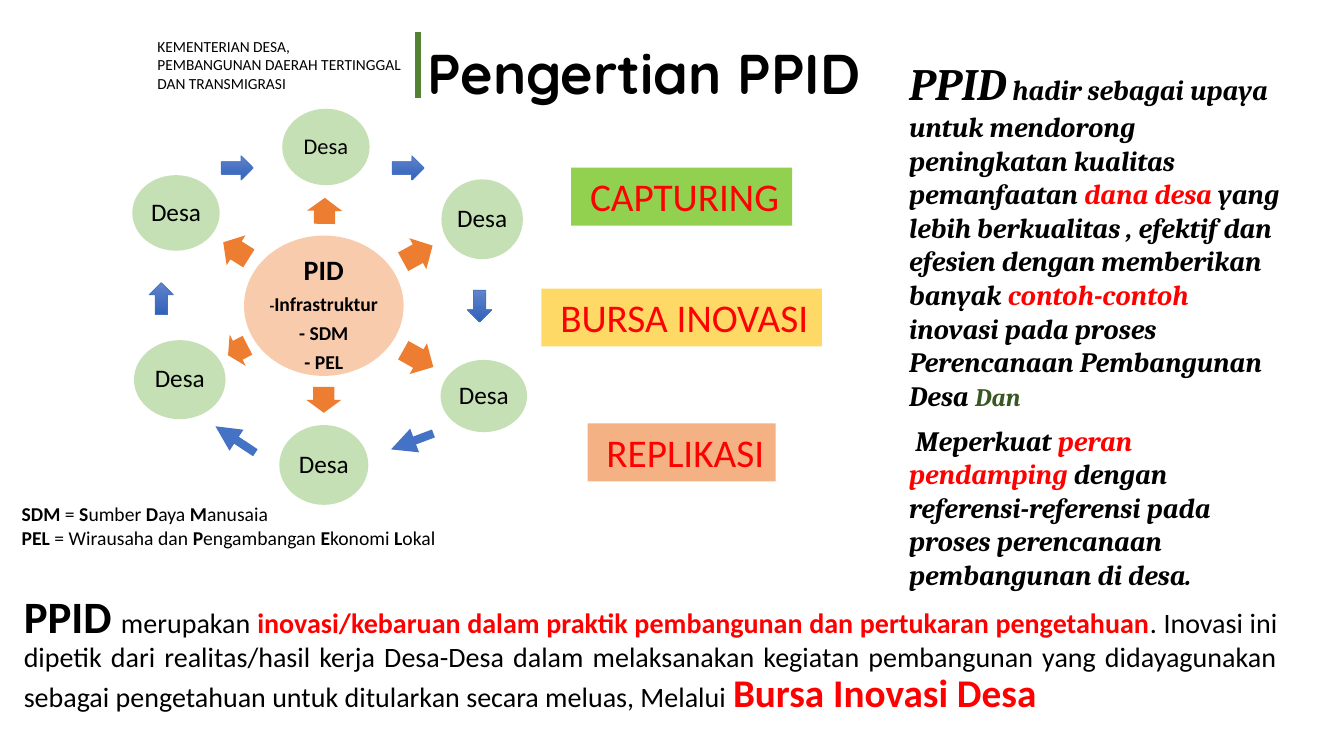
from dataclasses import dataclass

from lxml import etree
from pptx import Presentation, util as u
from pptx.dml.color import RGBColor
from pptx.enum import shapes, text
from pptx.oxml.ns import qn

COLUMNS, ROWS = 160, 90
WIDTH, HEIGHT = u.Inches(13.33), u.Inches(7.5)
SHAPE = shapes.MSO_SHAPE
ALIGN = text.PP_ALIGN
ANCHOR = text.MSO_ANCHOR


@dataclass(frozen=True)
class Theme:
    body: str = "Calibri"
    heading: str = "Quicksand"
    serif: str = "Cambria"
    black: str = "000000"
    red: str = "FF0000"
    dark_green: str = "385723"
    divider: str = "548235"
    village: str = "C5E0B4"
    hub: str = "F8CBAD"
    spoke: str = "ED7D31"
    cycle: str = "4472C4"
    cycle_stops: tuple = ("6183CB", "3062BB")
    capturing: str = "92D050"
    exchange: str = "FFD966"
    replication: str = "F4B183"
    display: int = 40
    lead: int = 32
    large: int = 28
    normal: int = 20
    label: int = 18
    small_label: int = 16
    note: int = 14
    caption: int = 11


THEME = Theme()


def column(count):
    return round(WIDTH * count / COLUMNS)


def row(count):
    return round(HEIGHT * count / ROWS)


def area(left, top, width, height):
    return column(left), row(top), column(width), row(height)


def centred(x, y, width, height):
    return area(x - width / 2, y - height / 2, width, height)


def set_attributes(target, values):
    for name, value in values.items():
        setattr(target, name, value)


def style(size, color=THEME.black, name=THEME.body, **flags):
    return {"size": u.Pt(size), "name": name, "color": color, **flags}


def add_run(paragraph, wording, look):
    run = paragraph.add_run()
    run.text = wording
    run.font.color.rgb = RGBColor.from_string(look["color"])
    set_attributes(run.font, {k: v for k, v in look.items() if k != "color"})


def write(shape, paragraphs, frame=None, layout=None):
    """Fill a shape with paragraphs, each a list of (wording, style) runs."""
    text_frame = shape.text_frame
    set_attributes(text_frame, {"word_wrap": True, **(frame or {})})
    for index, runs in enumerate(paragraphs):
        paragraph = text_frame.add_paragraph() if index else text_frame.paragraphs[0]
        set_attributes(paragraph, {"alignment": ALIGN.LEFT, **(layout or {})})
        for wording, look in runs:
            add_run(paragraph, wording, look)


def add_text(slide, place, paragraphs, frame=None, layout=None):
    shape = slide.shapes.add_textbox(*place)
    write(shape, paragraphs, frame, layout)
    return shape


def add_filled(slide, kind, place, color):
    shape = slide.shapes.add_shape(kind, *place)
    shape.shadow.inherit = False
    shape.fill.solid()
    shape.fill.fore_color.rgb = RGBColor.from_string(color)
    shape.line.fill.background()
    return shape


def add_circle(slide, place, color, paragraphs, anchor, **layout):
    circle = add_filled(slide, SHAPE.OVAL, place, color)
    sides = ("left", "top", "right", "bottom")
    frame = {f"margin_{side}": 0 for side in sides}
    write(circle, paragraphs, {**frame, "vertical_anchor": anchor},
          {"alignment": ALIGN.CENTER, "line_spacing": 0.9, **layout})


def add_spoke(slide, x, y, length, rotation):
    arrow = add_filled(slide, SHAPE.RIGHT_ARROW, centred(x, y, length, 4.2), THEME.spoke)
    arrow.rotation = rotation
    arrow.adjustments[0] = 0.6
    arrow.adjustments[1] = 0.5


def add_cycle_arrow(slide, kind, x, y, width, height):
    arrow = add_filled(slide, kind, centred(x, y, width, height), THEME.cycle)
    arrow.fill.gradient()
    arrow.fill.gradient_angle = 270
    for stop, color in zip(arrow.fill.gradient_stops, THEME.cycle_stops):
        stop.color.rgb = RGBColor.from_string(color)
    arrow.line.color.rgb = RGBColor.from_string(THEME.cycle)
    arrow.line.width = u.Pt(0.5)


def add_line(slide, start, end, color, points, arrowhead=False):
    line = slide.shapes.add_connector(
        shapes.MSO_CONNECTOR.STRAIGHT,
        column(start[0]), row(start[1]), column(end[0]), row(end[1]))
    line.line.color.rgb = RGBColor.from_string(color)
    line.line.width = u.Pt(points)
    if arrowhead:
        etree.SubElement(line.line._get_or_add_ln(), qn("a:tailEnd"), type="triangle")
    etree.SubElement(line._element.spPr, qn("a:effectLst"))


def add_header(slide):
    caption = style(THEME.caption)
    add_text(slide, area(17.55, 3.8, 32.2, 7.9), [
        [("KEMENTERIAN DESA,", caption)],
        [("PEMBANGUNAN DAERAH TERTINGGAL DAN TRANSMIGRASI", caption)]])
    add_line(slide, (49.8, 3.8), (49.8, 11.7), THEME.divider, 4.5)
    title = slide.shapes.title
    set_attributes(title, dict(zip(("left", "top", "width", "height"),
                                   area(47.9, 1.5, 108.7, 15.1))))
    write(title, [[("Pengertian PPID", style(THEME.display, name=THEME.heading, bold=True))]],
          {"margin_left": column(3), "vertical_anchor": ANCHOR.MIDDLE,
           "auto_size": text.MSO_AUTO_SIZE.NONE}, {"line_spacing": 0.9})


def add_wheel(slide):
    note = style(THEME.note, bold=True)
    add_circle(slide, centred(38.55, 36.4, 19, 16.7), THEME.hub, [
        [("PID", style(THEME.normal, bold=True))],
        [("-", style(THEME.caption, bold=True)), ("Infrastruktur", note)],
        [("- SDM", note)],
        [("- PEL", note)]], ANCHOR.TOP, space_after=u.Pt(5.6))

    for spoke in ((38.65, 25.1, 3.1, 270.8), (49.75, 30.2, 4, 331.3),
                  (49.8, 42.7, 4.1, 29.3), (38.55, 47.6, 3.1, 90),
                  (28.3, 41.7, 2.6, 152.7), (28.1, 29.8, 3.6, 212.2)):
        add_spoke(slide, *spoke)

    for *place, size in ((38.8, 17.5, 10.4, 9.1, THEME.small_label),
                         (57.4, 26.1, 9.7, 9.5, THEME.label),
                         (57.6, 47.15, 10.3, 8.6, THEME.label),
                         (38.55, 55.35, 10.6, 9.5, THEME.label),
                         (21.4, 45.2, 10.9, 9.4, THEME.label),
                         (20.95, 25.35, 10.4, 9, THEME.label)):
        add_circle(slide, centred(*place), THEME.village,
                   [[("Desa", style(size))]], ANCHOR.MIDDLE)

    for arrow in ((SHAPE.RIGHT_ARROW, 28.25, 20, 3.8, 2.9),
                  (SHAPE.RIGHT_ARROW, 48.6, 20, 3.8, 2.9),
                  (SHAPE.DOWN_ARROW, 57.1, 36.45, 2.9, 3.8),
                  (SHAPE.UP_ARROW, 19.2, 35.55, 2.9, 3.8)):
        add_cycle_arrow(slide, *arrow)
    for start, end in (((51.6, 51.6), (46.55, 53.5)), ((30.4, 53.9), (25.65, 50.75))):
        add_line(slide, start, end, THEME.cycle, 6, arrowhead=True)


def add_legend(slide):
    """Asterisks switch bold on and off."""
    lines = ("*SDM* = *S*umber *D*aya *M*anusaia",
             "*PEL* = Wirausaha dan *P*engambangan *E*konomi *L*okal")
    add_text(slide, area(1.4, 59.2, 54, 6.8), [
        [(part, style(THEME.note, bold=index % 2 == 1))
         for index, part in enumerate(line.split("*")) if part] for line in lines])


def add_steps(slide):
    for wording, y, width, color in (("CAPTURING", 23.4, 26.3, THEME.capturing),
                                     ("BURSA INOVASI", 37.8, 33.4, THEME.exchange),
                                     ("REPLIKASI", 53.85, 22.4, THEME.replication)):
        step = add_filled(slide, SHAPE.RECTANGLE, centred(81.15, y, width, 6.9), color)
        write(step, [[(wording, style(THEME.large, THEME.red))]],
              {"margin_left": column(2.25), "word_wrap": False,
               "vertical_anchor": ANCHOR.TOP})


def add_purpose(slide):
    def serif(size=THEME.normal, color=THEME.black):
        return style(size, color, THEME.serif, bold=True, italic=True)

    plain, accent = serif(), serif(color=THEME.red)
    purpose = add_text(slide, area(107.05, 9.35, 46.8, 58.3), [
        [("PPID", serif(THEME.lead)), (" ", serif(THEME.label)),
         ("hadir sebagai upaya untuk mendorong peningkatan kualitas pemanfaatan ", plain),
         ("dana desa ", accent),
         ("yang lebih berkualitas , efektif dan efesien dengan memberikan banyak ", plain),
         ("contoh-contoh", accent),
         (" inovasi pada proses Perencanaan Pembangunan Desa ", plain),
         ("Dan", serif(THEME.label, THEME.dark_green))],
        [("Meperkuat ", plain), ("peran pendamping ", accent),
         ("dengan referensi-referensi pada proses perencanaan pembangunan di desa.", plain)]],
        {"vertical_anchor": ANCHOR.MIDDLE}, {"space_after": u.Pt(8)})
    purpose.text_frame.paragraphs[1]._p.get_or_add_pPr().set("indent", str(column(0.75)))


def add_definition(slide):
    plain = style(THEME.normal)
    add_text(slide, area(1.65, 70.2, 151.6, 16.1), [[
        ("PPID", style(THEME.lead, bold=True)), (" ", style(THEME.large, bold=True)),
        ("merupakan ", plain),
        ("inovasi/kebaruan dalam praktik pembangunan dan pertukaran pengetahuan",
         style(THEME.normal, THEME.red, bold=True)),
        (". Inovasi ini dipetik dari realitas/hasil kerja Desa-Desa dalam melaksanakan "
         "kegiatan pembangunan yang didayagunakan sebagai pengetahuan untuk ditularkan "
         "secara meluas, Melalui ", plain),
        ("Bursa Inovasi Desa", style(THEME.large, THEME.red, bold=True))]],
        layout={"alignment": ALIGN.JUSTIFY, "line_spacing": 0.9})


def main():
    presentation = Presentation()
    set_attributes(presentation, {"slide_width": WIDTH, "slide_height": HEIGHT})
    slide = presentation.slides.add_slide(presentation.slide_layouts[5])
    for add_part in (add_header, add_definition, add_legend, add_wheel,
                     add_purpose, add_steps):
        add_part(slide)
    presentation.save("out.pptx")


if __name__ == "__main__":
    main()
